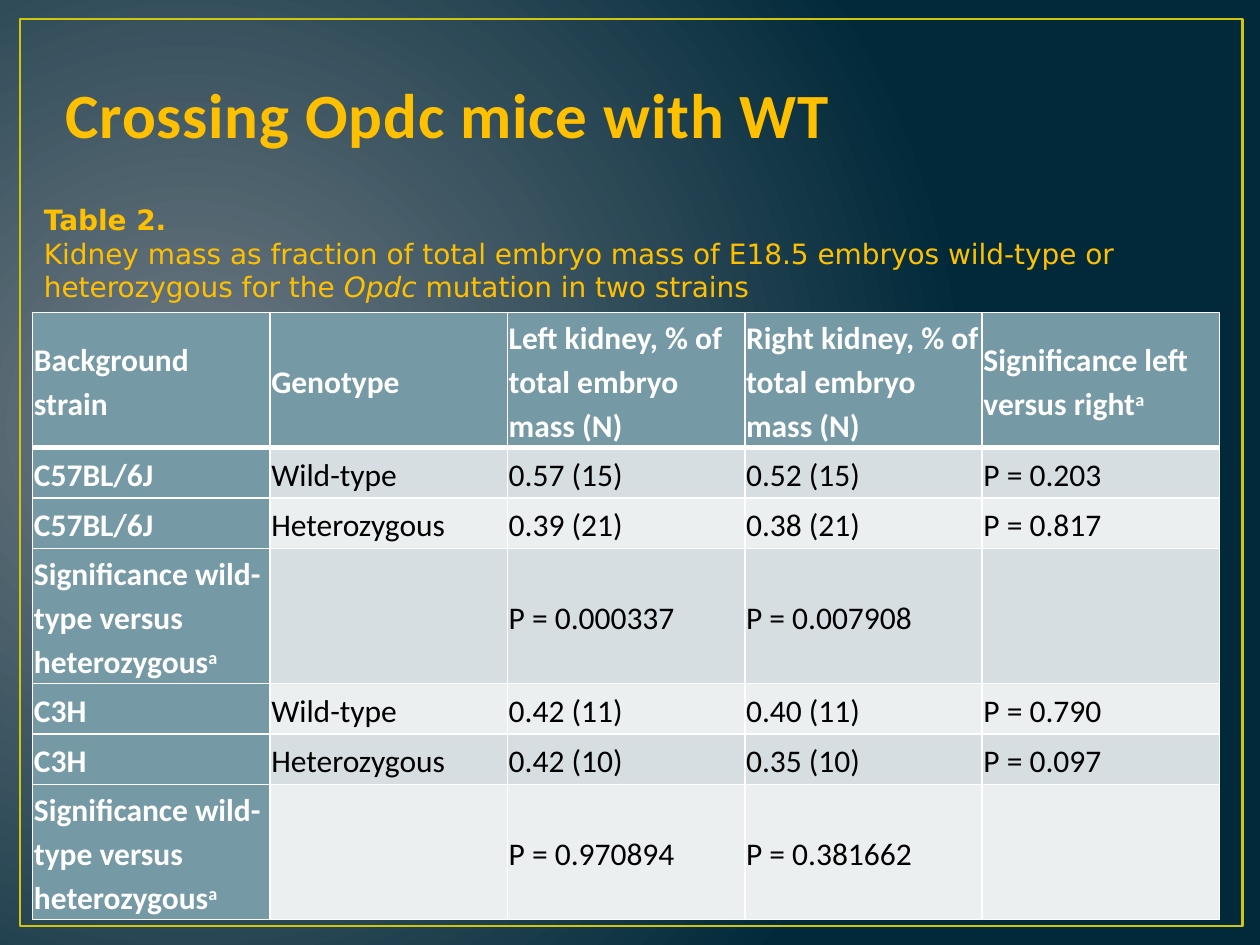
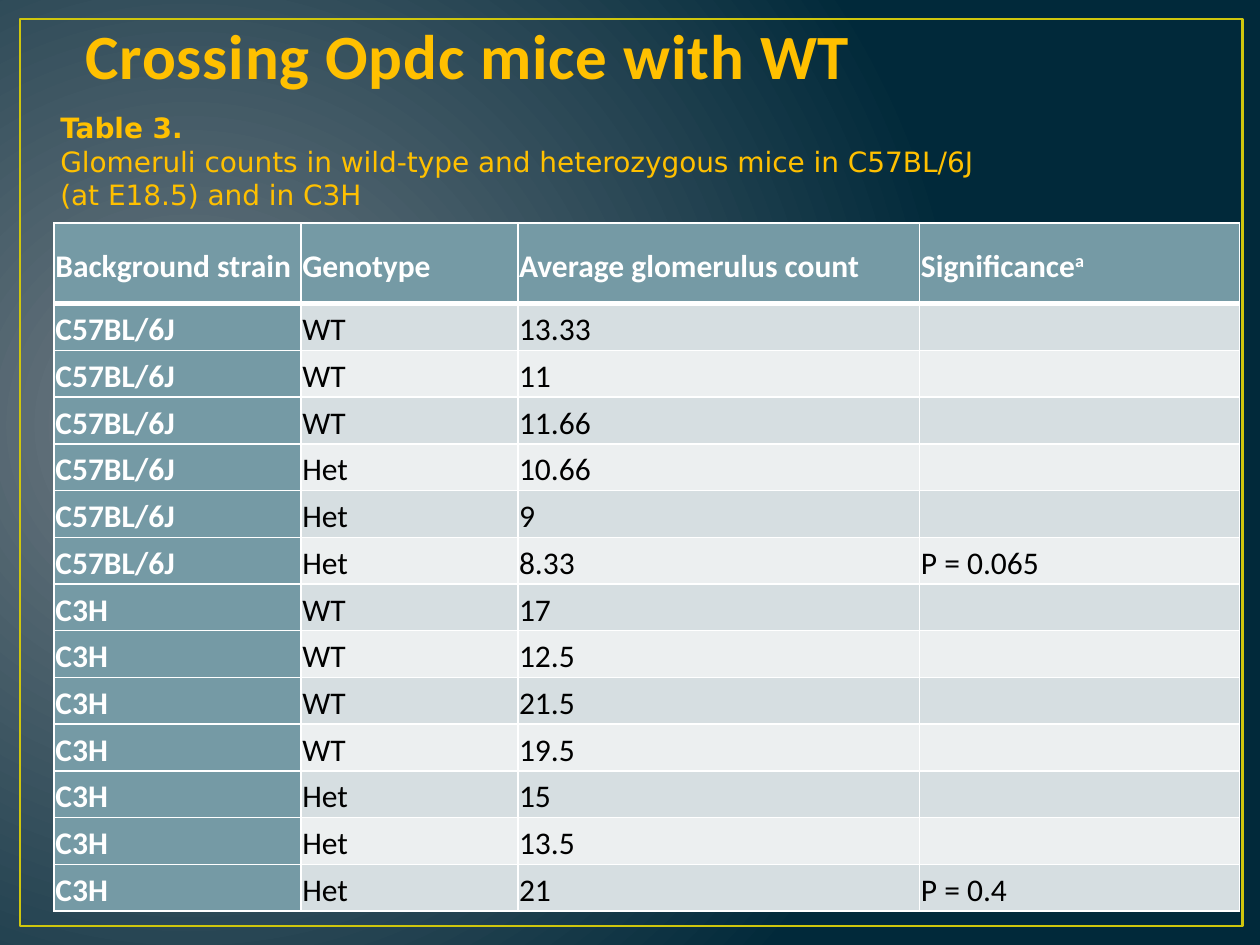
"""Build two slides of kidney measurements in Opdc mice."""
import dataclasses

import lxml.etree
import pptx
import pptx.dml.color
import pptx.enum.shapes
import pptx.enum.text
import pptx.oxml.ns
import pptx.util

Inches = pptx.util.Inches
qn = pptx.oxml.ns.qn


@dataclasses.dataclass(frozen=True)
class Theme:
    """Colours, fonts and type sizes of the deck."""
    glow: str = "717C84"
    night: str = "01293A"
    frame: str = "CFC60D"
    gold: str = "FFC000"
    outline: str = "384F55"
    header: str = "759AA5"
    bands: tuple = ("D6DEE1", "ECEFF0")
    white: str = "FFFFFF"
    black: str = "000000"
    body_font: str = "Calibri"
    caption_font: str = "DejaVu Sans"
    title_size: int = 36
    caption_size: int = 16
    cell_size: int = 18


THEME = Theme()
TITLE = "Crossing Opdc mice with WT"
SIGNIFICANCE = "Significance wild-type versus heterozygous^a"
KIDNEY_ROWS = [
    ["Background strain", "Genotype", "Left kidney, % of total embryo mass (N)",
     "Right kidney, % of total embryo mass (N)", "Significance left versus right^a"],
    ["C57BL/6J", "Wild-type", "0.57 (15)", "0.52 (15)", "P = 0.203"],
    ["C57BL/6J", "Heterozygous", "0.39 (21)", "0.38 (21)", "P = 0.817"],
    [SIGNIFICANCE, "", "P = 0.000337", "P = 0.007908", ""],
    ["C3H", "Wild-type", "0.42 (11)", "0.40 (11)", "P = 0.790"],
    ["C3H", "Heterozygous", "0.42 (10)", "0.35 (10)", "P = 0.097"],
    [SIGNIFICANCE, "", "P = 0.970894", "P = 0.381662", ""],
]
GLOMERULI_COUNTS = [
    ("C57BL/6J", "WT", ["13.33", "11", "11.66"], ""),
    ("C57BL/6J", "Het", ["10.66", "9", "8.33"], "P = 0.065"),
    ("C3H", "WT", ["17", "12.5", "21.5", "19.5"], ""),
    ("C3H", "Het", ["15", "13.5", "21"], "P = 0.4"),
]


def rgb(code):
    """Return a colour from its hexadecimal code."""
    return pptx.dml.color.RGBColor.from_string(code)


def add_span(para, text, size, color, font=THEME.body_font, bold=False,
             italic=False, raised=False):
    """Add formatted text to a paragraph and return its run."""
    span = para.add_run()
    span.text = text
    span.font.size = pptx.util.Pt(size)
    span.font.name = font
    span.font.bold = bold
    span.font.italic = italic
    span.font.color.rgb = rgb(color)
    if raised:
        span._r.get_or_add_rPr().set("baseline", "30000")
    return span


def add_line(parent, tag, points, color):
    """Add a solid line element to an XML parent and return it."""
    line = lxml.etree.SubElement(parent, qn(tag), w=str(pptx.util.Pt(points)))
    fill = lxml.etree.SubElement(line, qn("a:solidFill"))
    lxml.etree.SubElement(fill, qn("a:srgbClr"), val=color)
    return line


def paint_background(master):
    """Give the master a radial gradient background."""
    fill = master.background.fill
    fill.gradient()
    for stop, color in zip(fill.gradient_stops, (THEME.glow, THEME.night)):
        stop.color.rgb = rgb(color)
    gradient = master.element.find(".//" + qn("a:gradFill"))
    gradient.remove(gradient.find(qn("a:lin")))
    radial = lxml.etree.SubElement(gradient, qn("a:path"), path="circle")
    lxml.etree.SubElement(radial, qn("a:fillToRect"),
                          l="15000", t="50000", r="85000", b="60000")


def add_frame(page):
    """Draw the thin frame around the page."""
    frame = page.shapes.add_shape(pptx.enum.shapes.MSO_SHAPE.RECTANGLE,
                                  Inches(0.16), Inches(0.15), Inches(9.7), Inches(7.2))
    frame.shadow.inherit = False
    frame.fill.background()
    frame.line.color.rgb = rgb(THEME.frame)
    frame.line.width = pptx.util.Pt(1.5)


def place_title(page, box):
    """Move the title placeholder to its box and fill it."""
    title = page.shapes.title
    title.left, title.top, title.width, title.height = map(Inches, box)
    title.text_frame.vertical_anchor = pptx.enum.text.MSO_ANCHOR.BOTTOM
    para = title.text_frame.paragraphs[0]
    para.alignment = pptx.enum.text.PP_ALIGN.LEFT
    span = add_span(para, TITLE, THEME.title_size, THEME.gold, bold=True)
    properties = span._r.get_or_add_rPr()
    properties.set("spc", "50")
    properties.insert(0, add_line(properties, "a:ln", 1.05, THEME.outline))


def add_caption(page, box, lines):
    """Add the table caption, one paragraph for each line of spans."""
    frame = page.shapes.add_textbox(*map(Inches, box)).text_frame
    frame.word_wrap = True
    for index, line in enumerate(lines):
        para = frame.add_paragraph() if index else frame.paragraphs[0]
        for text, style in line:
            add_span(para, text, THEME.caption_size, THEME.gold,
                     font=THEME.caption_font, **style)


def fill_cell(cell, text, row, column):
    """Format one cell by its place; text after a caret is raised."""
    cell.margin_left = cell.margin_right = Inches(0.01)
    cell.margin_top = cell.margin_bottom = Inches(0.01)
    cell.vertical_anchor = pptx.enum.text.MSO_ANCHOR.MIDDLE
    properties = cell._tc.get_or_add_tcPr()
    rules = {"a:lnL": 1, "a:lnR": 1, "a:lnT": 3 if row == 1 else 1,
             "a:lnB": 3 if row == 0 else 1}
    for tag, points in rules.items():
        add_line(properties, tag, points, THEME.white)
    heading = row == 0 or column == 0
    cell.fill.solid()
    cell.fill.fore_color.rgb = rgb(THEME.header if heading else THEME.bands[(row - 1) % 2])
    para = cell.text_frame.paragraphs[0]
    para.line_spacing = 1.15
    for index, part in enumerate(text.split("^") if text else []):
        add_span(para, part, THEME.cell_size, THEME.white if heading else THEME.black,
                 bold=heading, raised=index > 0)


def add_data_table(page, box, widths, heights, rows):
    """Add a table with a heading row and a heading column."""
    table = page.shapes.add_table(len(rows), len(widths), *map(Inches, box)).table
    for column, width in zip(table.columns, widths):
        column.width = Inches(width)
    for line, height in zip(table.rows, heights):
        line.height = Inches(height)
    for row, texts in enumerate(rows):
        for column, text in enumerate(texts):
            fill_cell(table.cell(row, column), text, row, column)


def add_page(deck, title_box):
    """Add a framed title-only page."""
    page = deck.slides.add_slide(deck.slide_layouts[5])
    add_frame(page)
    place_title(page, title_box)
    return page


def add_kidney_page(deck):
    """Build the page on kidney mass."""
    page = add_page(deck, (0.42, 0.17, 9, 1.08))
    heights = [0.78 if row % 3 == 0 else 0.4 for row in range(len(KIDNEY_ROWS))]
    add_data_table(page, (0.26, 2.48, 9.42, 4.75), [1.884] * 5, heights, KIDNEY_ROWS)
    add_caption(page, (0.25, 1.56, 8.97, 1.21), [
        [("Table 2.", {"bold": True})],
        [("Kidney mass as fraction of total embryo mass of E18.5 embryos wild-type or", {})],
        [("heterozygous for the ", {}), ("Opdc", {"italic": True}),
         (" mutation in two strains", {})],
    ])


def add_glomeruli_page(deck):
    """Build the page on glomeruli counts."""
    page = add_page(deck, (0.58, 0, 9, 0.78))
    rows = [["Background strain", "Genotype", "Average glomerulus count", "Significance^a"]]
    for strain, genotype, counts, significance in GLOMERULI_COUNTS:
        rows += [[strain, genotype, count, ""] for count in counts]
        rows[-1][-1] = significance
    heights = [0.64] + [0.36] * (len(rows) - 1)
    add_data_table(page, (0.43, 1.77, 9.41, 5.4), [1.96, 1.72, 3.19, 2.54], heights, rows)
    add_caption(page, (0.38, 0.83, 7.72, 1.21), [
        [("Table 3.", {"bold": True})],
        [("Glomeruli counts in wild-type and heterozygous mice in C57BL/6J", {})],
        [("(at E18.5) and in C3H", {})],
    ])


def main():
    """Build and save the deck."""
    deck = pptx.Presentation()
    deck.slide_width, deck.slide_height = Inches(10), Inches(7.5)
    paint_background(deck.slide_master)
    add_kidney_page(deck)
    add_glomeruli_page(deck)
    deck.save("out.pptx")


if __name__ == "__main__":
    main()
